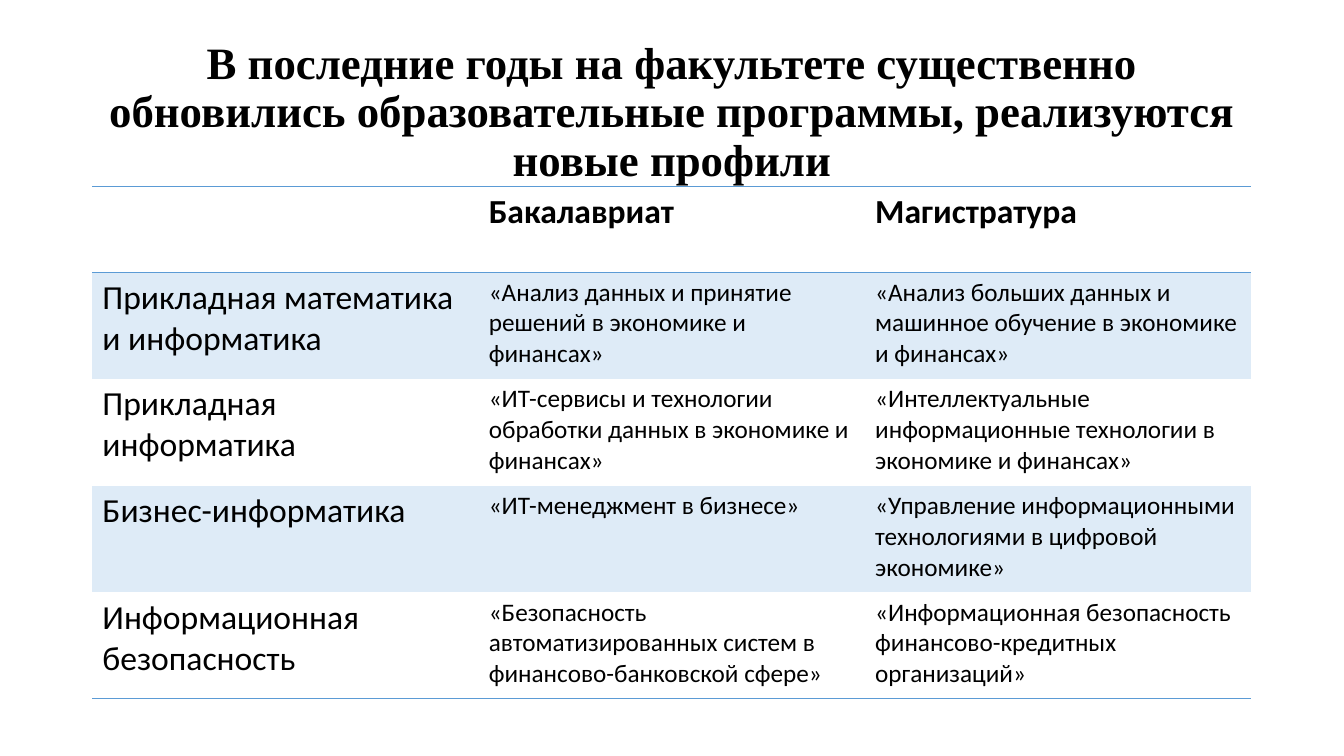
"""Build the slide on renewed degree programmes."""
from pptx import Presentation
from pptx import util as u
from pptx.dml.color import RGBColor
from pptx.enum import text
from pptx.oxml import ns
from lxml import etree

Pt = u.Pt
BLACK = RGBColor(0x00, 0x00, 0x00)
BLUE = RGBColor(0x5B, 0x9B, 0xD5)
PALE = RGBColor(0xDE, 0xEB, 0xF7)

LEFT, WIDTH = Pt(66), Pt(828)
TITLE = ("В последние годы на факультете существенно обновились "
         "образовательные программы, реализуются новые профили")
HEAD = dict(name="Calibri", size=Pt(24), bold=True)
FIELD = dict(name="Calibri", size=Pt(24), bold=False)
COURSE = dict(name="Calibri", size=Pt(18), bold=False)
ROWS = [
    ("", "Бакалавриат", "Магистратура"),
    ("Прикладная математика и информатика",
     "«Анализ данных и принятие решений в экономике и финансах»",
     "«Анализ больших данных и машинное обучение в экономике и финансах»"),
    ("Прикладная информатика",
     "«ИТ-сервисы и технологии обработки данных в экономике и финансах»",
     "«Интеллектуальные информационные технологии в экономике и финансах»"),
    ("Бизнес-информатика",
     "«ИТ-менеджмент в бизнесе»",
     "«Управление информационными технологиями в цифровой экономике»"),
    ("Информационная безопасность",
     "«Безопасность автоматизированных систем в финансово-банковской сфере»",
     "«Информационная безопасность финансово-кредитных организаций»"),
]


def apply(item, form):
    """Set each attribute of an item from a dict."""
    for key, value in form.items():
        setattr(item, key, value)


def write(par, words, form):
    """Add one black run to a paragraph."""
    run = par.add_run()
    run.text = words
    apply(run.font, form)
    run.font.color.rgb = BLACK


def add_title(slide):
    """Place and format the slide title."""
    title = slide.shapes.title
    apply(title, dict(left=LEFT, top=Pt(28.75), width=WIDTH, height=Pt(104.4)))
    apply(title.text_frame, dict(word_wrap=True,
                                 auto_size=text.MSO_AUTO_SIZE.NONE,
                                 vertical_anchor=text.MSO_ANCHOR.MIDDLE))
    par = title.text_frame.paragraphs[0]
    apply(par, dict(alignment=text.PP_ALIGN.CENTER, line_spacing=0.9))
    write(par, TITLE, dict(name="Times New Roman", size=Pt(32), bold=True))


def set_edges(cell, ruled):
    """Rule the named sides of a cell in blue and clear the others."""
    props = cell._tc.get_or_add_tcPr()
    for side in "LRTB":
        line = etree.SubElement(props, ns.qn("a:ln" + side), w=str(Pt(1)))
        if side in ruled:
            fill = etree.SubElement(line, ns.qn("a:solidFill"))
            etree.SubElement(fill, ns.qn("a:srgbClr"), val=str(BLUE))
        else:
            etree.SubElement(line, ns.qn("a:noFill"))


def fill_cell(cell, words, row, col):
    """Give a cell its edges, fill and words."""
    last = len(ROWS) - 1
    set_edges(cell, {0: "TB", 1: "T", last: "B"}.get(row, ""))
    if row % 2:
        cell.fill.solid()
        cell.fill.fore_color.rgb = PALE
    else:
        cell.fill.background()
    if words:
        form = HEAD if row == 0 else FIELD if col == 0 else COURSE
        write(cell.text_frame.paragraphs[0], words, form)


def add_grid(slide):
    """Add the table of programmes."""
    count = len(ROWS[0])
    frame = slide.shapes.add_table(len(ROWS), count, LEFT, Pt(133.2),
                                   WIDTH, Pt(366))
    grid = frame.table
    apply(grid, dict(first_row=False, horz_banding=False))
    for row, line in enumerate(ROWS):
        grid.rows[row].height = Pt(76.2 if row else 61.2)
        for col, words in enumerate(line):
            fill_cell(grid.cell(row, col), words, row, col)


def main():
    """Build and save the deck."""
    deck = Presentation()
    apply(deck, dict(slide_width=Pt(960), slide_height=Pt(540)))
    slide = deck.slides.add_slide(deck.slide_layouts[5])
    add_title(slide)
    add_grid(slide)
    deck.save("out.pptx")


if __name__ == "__main__":
    main()
